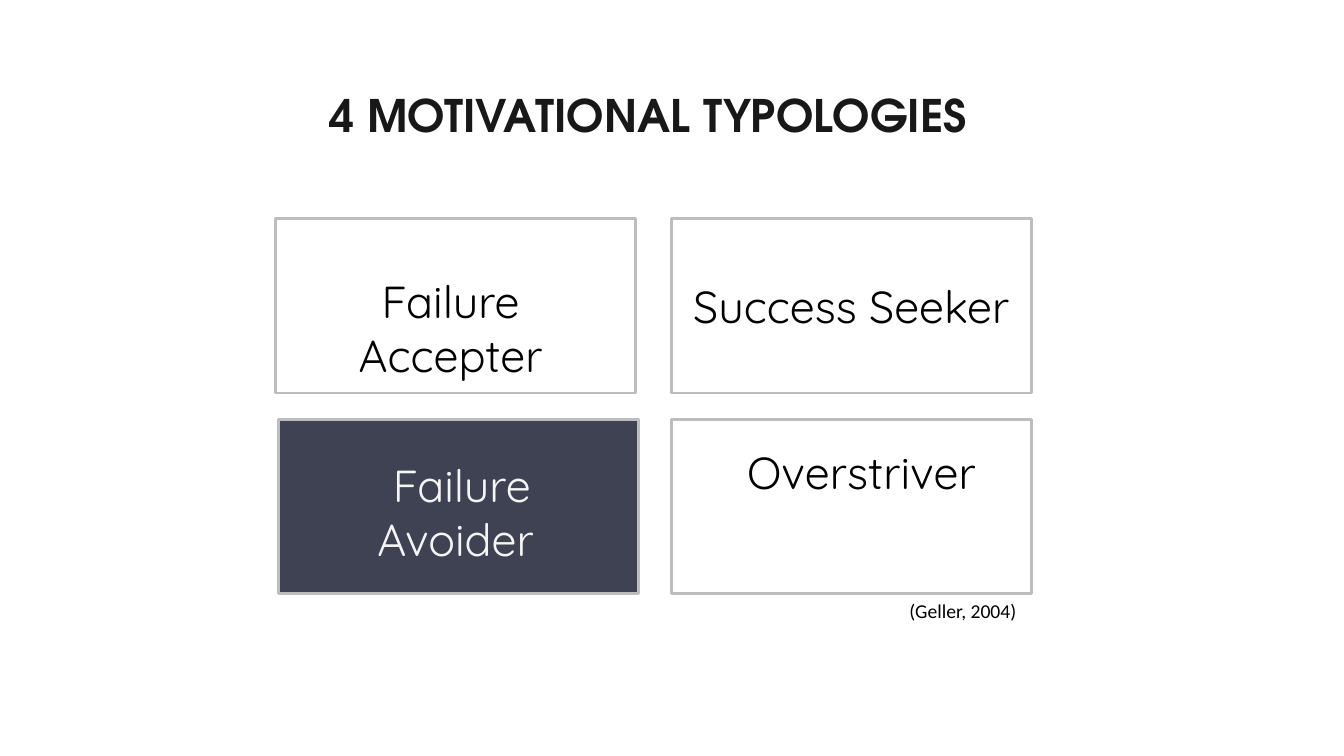
from dataclasses import dataclass

from pptx import Presentation
from pptx.dml.color import RGBColor
from pptx.enum.shapes import MSO_SHAPE
from pptx.enum.text import MSO_ANCHOR, MSO_AUTO_SIZE, PP_ALIGN
from pptx.util import Inches, Pt

COLORS = {
    "title": "181818",
    "text": "000000",
    "light_text": "F5F5F5",
    "border": "BDBDBD",
    "highlight": "3F4252",
}
SLIDE_WIDTH, SLIDE_HEIGHT = 13.33, 7.5
GRID_LEFT, GRID_TOP = 2.73, 2.17
CARD_WIDTH, CARD_HEIGHT = 3.57, 1.73
COLUMN_STEP, ROW_STEP = 3.93, 1.99


@dataclass
class Typology:
    """A card's grid cell, its label and the label's box within the card."""
    name: str
    column: int
    row: int
    label_box: tuple
    shift: float = 0
    highlighted: bool = False


TYPOLOGIES = [
    Typology("Failure Accepter", 0, 0, (0.18, 0.5, 3.12, 1.18)),
    Typology("Success Seeker", 1, 0, (0, 0.55, 3.57, 0.64)),
    Typology("Failure Avoider ", 0, 1, (0.26, 0.33, 3.12, 1.18), 0.03, True),
    Typology("Overstriver", 1, 1, (0.36, 0.2, 3.05, 0.64)),
]


def color(name):
    """Return the named colour."""
    return RGBColor.from_string(COLORS[name])


def place(shape, box):
    """Move and size a shape to a box in inches."""
    shape.left, shape.top, shape.width, shape.height = map(Inches, box)


def write(shape, text, font_name, size, color_name,
          alignment=PP_ALIGN.CENTER, bold=False):
    """Put one formatted paragraph at the top of a shape."""
    frame = shape.text_frame
    frame.text = text
    frame.word_wrap = True
    frame.auto_size = MSO_AUTO_SIZE.NONE
    frame.vertical_anchor = MSO_ANCHOR.TOP
    paragraph = frame.paragraphs[0]
    paragraph.alignment = alignment
    font = paragraph.font
    font.name, font.size, font.bold = font_name, Pt(size), bold
    font.color.rgb = color(color_name)


def add_title(slide, box):
    """Format the title placeholder in its box."""
    place(slide.shapes.title, box)
    write(slide.shapes.title, "4 MOTIVATIONAL TYPOLOGIES",
          "TeX Gyre Adventor", 32, "title", bold=True)


def add_card(slide, typology, left, top):
    """Draw one typology's rectangle and its label."""
    card = slide.shapes.add_shape(
        MSO_SHAPE.RECTANGLE,
        *map(Inches, (left, top, CARD_WIDTH, CARD_HEIGHT)))
    card.shadow.inherit = False
    card.line.color.rgb = color("border")
    card.line.width = Pt(2)
    if typology.highlighted:
        card.fill.solid()
        card.fill.fore_color.rgb = color("highlight")
    else:
        card.fill.background()
    offset_x, offset_y, width, height = typology.label_box
    label = slide.shapes.add_textbox(
        *map(Inches, (left + offset_x, top + offset_y, width, height)))
    write(label, typology.name, "Quicksand", 32,
          "light_text" if typology.highlighted else "text")


def add_typology_grid(slide, left, top):
    """Lay out the cards in two columns and two rows."""
    for typology in TYPOLOGIES:
        add_card(slide, typology,
                 left + typology.column * COLUMN_STEP + typology.shift,
                 top + typology.row * ROW_STEP)


def add_citation(slide, box):
    """Write the source under the grid."""
    citation = slide.shapes.add_textbox(*map(Inches, box))
    write(citation, "(Geller, 2004)", "Calibri", 14, "text", PP_ALIGN.LEFT)


def main():
    """Build and save the slide."""
    presentation = Presentation()
    presentation.slide_width = Inches(SLIDE_WIDTH)
    presentation.slide_height = Inches(SLIDE_HEIGHT)
    slide = presentation.slides.add_slide(presentation.slide_layouts[5])
    add_title(slide, (2.38, 0.82, 8.11, 0.64))
    add_typology_grid(slide, GRID_LEFT, GRID_TOP)
    add_citation(slide, (8.92, GRID_TOP + ROW_STEP + CARD_HEIGHT, 2.27, 0.34))
    presentation.save("out.pptx")


if __name__ == "__main__":
    main()
